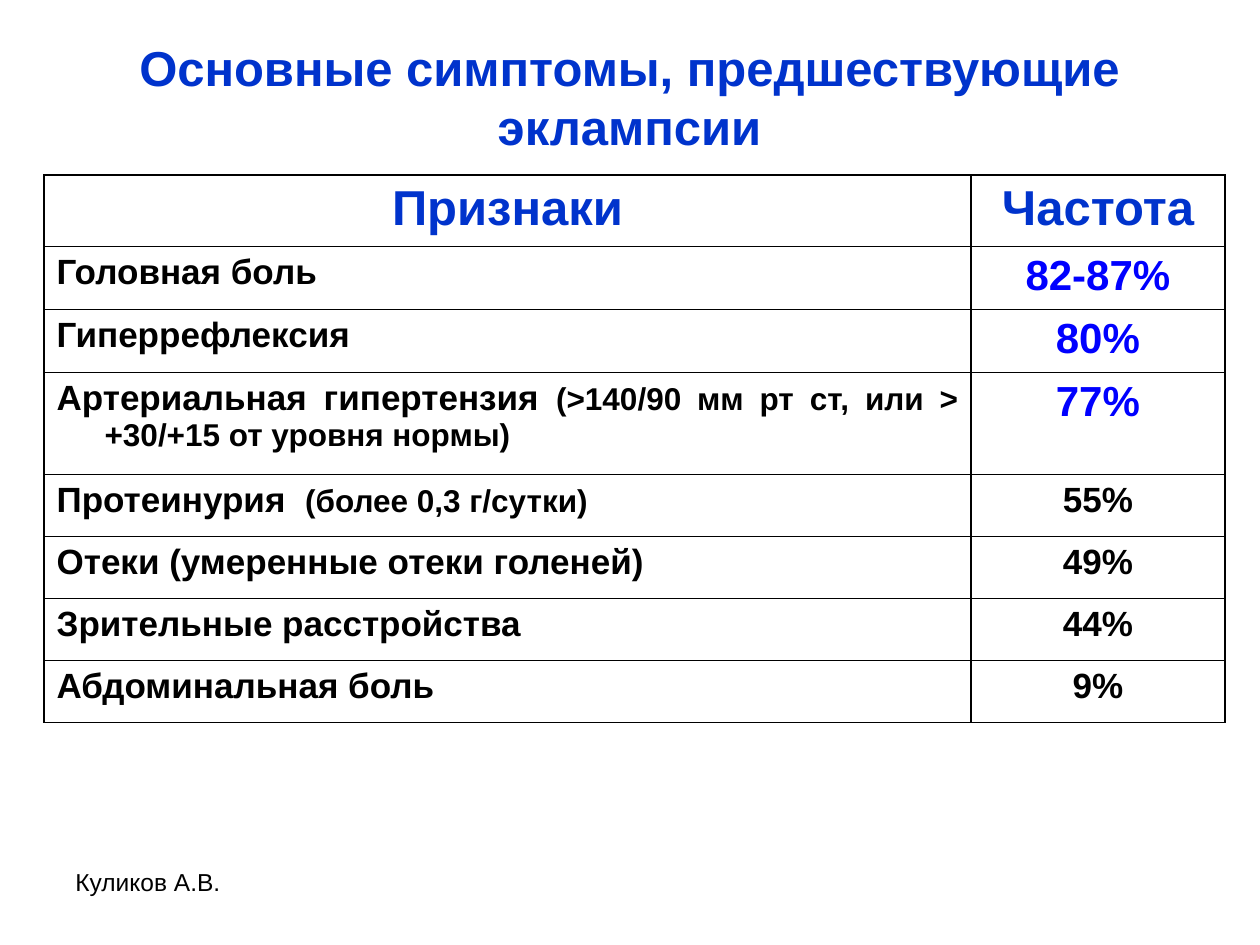
from lxml import etree
from pptx import Presentation
from pptx.dml.color import RGBColor
from pptx.enum.text import MSO_ANCHOR, PP_ALIGN
from pptx.oxml.ns import qn
from pptx.util import Emu, Pt

PX = 914400 // 126
FONT = "Arial"
HEADING_BLUE = RGBColor(0x00, 0x33, 0xCC)
VALUE_BLUE = RGBColor(0x00, 0x00, 0xFF)
BLACK = RGBColor(0x00, 0x00, 0x00)
LEFT, CENTER, JUSTIFY = PP_ALIGN.LEFT, PP_ALIGN.CENTER, PP_ALIGN.JUSTIFY
TOP, MIDDLE = MSO_ANCHOR.TOP, MSO_ANCHOR.MIDDLE

HEADING = {"size": Pt(28), "bold": True, "color": HEADING_BLUE}
SYMPTOM = {"size": Pt(20), "bold": True, "color": BLACK}
DETAIL = {"size": Pt(18), "bold": True, "color": BLACK}
FREQUENT = {"size": Pt(24), "bold": True, "color": VALUE_BLUE}
AUTHOR = {"size": Pt(14), "bold": False, "color": BLACK}

COLUMN_WIDTHS = [927, 254]
HANGING_INDENT = 48
# Row height, symptom, its detail, frequency, frequency style
SYMPTOMS = [
    (63, "Головная боль", "", "82-87%", FREQUENT),
    (63, "Гиперрефлексия", "", "80%", FREQUENT),
    (102, "Артериальная гипертензия ",
     "(>140/90 мм рт ст, или > +30/+15 от уровня нормы)", "77%", FREQUENT),
    (62, "Протеинурия  ", "(более 0,3 г/сутки)", "55%", SYMPTOM),
    (62, "Отеки (умеренные отеки голеней)", "", "49%", SYMPTOM),
    (62, "Зрительные расстройства", "", "44%", SYMPTOM),
    (62, "Абдоминальная боль", "", "9%", SYMPTOM),
]
HEADER_HEIGHT = 71


def px(length):
    return Emu(length * PX)


def add_run(paragraph, text, style):
    run = paragraph.add_run()
    run.text = text
    run.font.name = FONT
    for key, value in style.items():
        if key == "color":
            run.font.color.rgb = value
        else:
            setattr(run.font, key, value)


def add_label(slide, box, text, style, align, anchor):
    frame = slide.shapes.add_textbox(*map(px, box)).text_frame
    frame.word_wrap = True
    frame.vertical_anchor = anchor
    paragraph = frame.paragraphs[0]
    paragraph.alignment = align
    add_run(paragraph, text, style)


def add_borders(cell):
    properties = cell._tc.get_or_add_tcPr()
    for position, side in enumerate(("a:lnL", "a:lnR", "a:lnT", "a:lnB")):
        line = etree.Element(qn(side), w=str(Pt(1)))
        fill = etree.SubElement(line, qn("a:solidFill"))
        etree.SubElement(fill, qn("a:srgbClr"), val=str(BLACK))
        properties.insert(position, line)


def fill_cell(cell, runs, align):
    cell.fill.background()
    add_borders(cell)
    paragraph = cell.text_frame.paragraphs[0]
    paragraph.alignment = align
    properties = paragraph._p.get_or_add_pPr()
    properties.set("marL", str(px(HANGING_INDENT)))
    properties.set("indent", str(px(-HANGING_INDENT)))
    for text, style in runs:
        if text:
            add_run(paragraph, text, style)


def add_symptom_table(slide):
    heights = [HEADER_HEIGHT] + [row[0] for row in SYMPTOMS]
    box = (44, 175, sum(COLUMN_WIDTHS), sum(heights))
    table = slide.shapes.add_table(
        len(heights), len(COLUMN_WIDTHS), *map(px, box)).table
    table.horz_banding = False
    for column, width in zip(table.columns, COLUMN_WIDTHS):
        column.width = px(width)
    for row, height in zip(table.rows, heights):
        row.height = px(height)

    for index, title in enumerate(("Признаки", "Частота")):
        fill_cell(table.cell(0, index), [(title, HEADING)], CENTER)
    for index, symptom in enumerate(SYMPTOMS, start=1):
        _, name, detail, frequency, frequency_style = symptom
        fill_cell(table.cell(index, 0),
                  [(name, SYMPTOM), (detail, DETAIL)], JUSTIFY)
        fill_cell(table.cell(index, 1),
                  [(frequency, frequency_style)], CENTER)


def main():
    deck = Presentation()
    deck.slide_width, deck.slide_height = px(1260), px(945)
    slide = deck.slides.add_slide(deck.slide_layouts[6])
    add_label(slide, (63, 861, 294, 65), "Куликов А.В.", AUTHOR, LEFT, TOP)
    add_label(slide, (34, 38, 1191, 117),
              "Основные симптомы, предшествующие эклампсии",
              HEADING, CENTER, MIDDLE)
    add_symptom_table(slide)
    deck.save("out.pptx")


if __name__ == "__main__":
    main()
